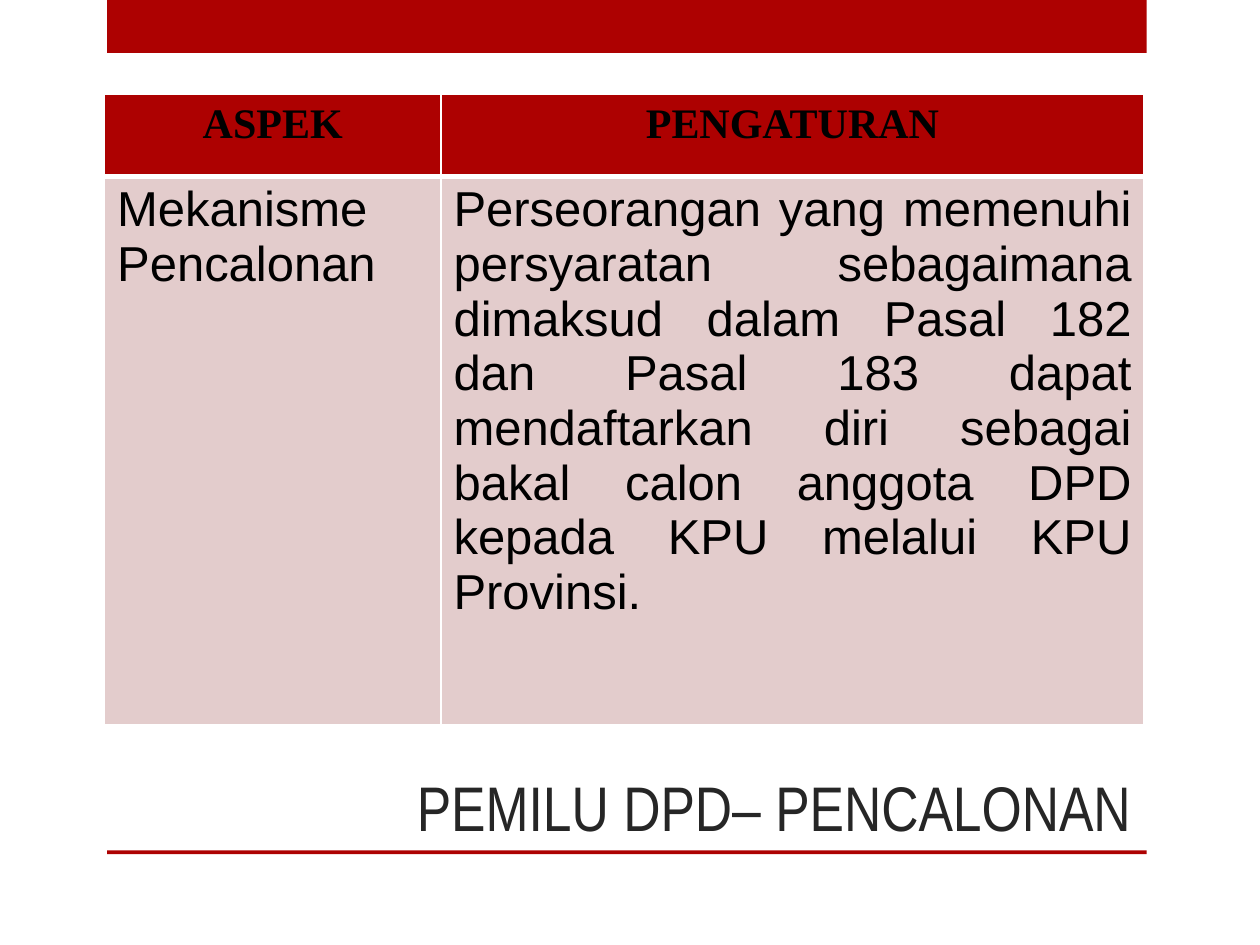
from lxml import etree
from pptx import Presentation
from pptx.dml.color import RGBColor
from pptx.enum.shapes import MSO_SHAPE
from pptx.enum.text import MSO_ANCHOR, PP_ALIGN
from pptx.oxml.ns import qn
from pptx.util import Inches, Pt

RECT = MSO_SHAPE.RECTANGLE
BOTTOM = MSO_ANCHOR.BOTTOM
LEFT, MID, RIGHT, FULL = (
    PP_ALIGN.LEFT, PP_ALIGN.CENTER, PP_ALIGN.RIGHT, PP_ALIGN.JUSTIFY)

RED = RGBColor(0xAD, 0x01, 0x01)
PINK = RGBColor(0xE3, 0xCC, 0xCC)
WHITE = RGBColor(0xFF, 0xFF, 0xFF)
BLACK = RGBColor(0, 0, 0)
GREY = RGBColor(0x26, 0x26, 0x26)

TITLE = {"name": "Arial Narrow", "size": Pt(36), "bold": False}
HEAD = {"name": "Times New Roman", "size": Pt(24), "bold": True}
BODY = {"name": "Arial", "size": Pt(28), "bold": False}


def write(frame, text, align, form, color):
    par = frame.paragraphs[0]
    par.alignment = align
    run = par.add_run()
    run.text = text
    for key, value in form.items():
        setattr(run.font, key, value)
    run.font.color.rgb = color


def border(cell, widths):
    props = cell._tc.get_or_add_tcPr()
    for i, (side, width) in enumerate(widths.items()):
        line = etree.Element(qn("a:ln" + side), w=str(Pt(width)))
        fill = etree.SubElement(line, qn("a:solidFill"))
        etree.SubElement(fill, qn("a:srgbClr"), val=str(WHITE))
        props.insert(i, line)


deck = Presentation()
deck.slide_width, deck.slide_height = Inches(10), Inches(7.5)
slide = deck.slides.add_slide(deck.slide_layouts[5])

# Red bar at the top and thin rule under the title
for top, height in ((0, 0.42), (6.75, 0.03)):
    bar = slide.shapes.add_shape(
        RECT, Inches(0.85), Inches(top), Inches(8.25), Inches(height))
    bar.shadow.inherit = False
    bar.fill.solid()
    bar.fill.fore_color.rgb = RED
    bar.line.fill.background()

# Title
title = slide.shapes.title
title.left, title.top = Inches(0.83), Inches(5)
title.width, title.height = Inches(8.25), Inches(1.75)
title.text_frame.vertical_anchor = BOTTOM
write(title.text_frame, "PEMILU DPD– PENCALONAN", RIGHT, TITLE, GREY)

# Table
table = slide.shapes.add_table(
    2, 2, Inches(0.83), Inches(0.75), Inches(8.25), Inches(5)).table
for col, width in zip(table.columns, (2.67, 5.58)):
    col.width = Inches(width)

rows = (
    (0.65, RED, HEAD, {"L": 1, "R": 1, "T": 1, "B": 3},
     (("ASPEK", MID), ("PENGATURAN", MID))),
    (4.35, PINK, BODY, {"L": 1, "R": 1, "T": 3, "B": 1},
     (("Mekanisme Pencalonan", LEFT),
      ("Perseorangan yang memenuhi persyaratan sebagaimana dimaksud dalam "
       "Pasal 182 dan Pasal 183 dapat mendaftarkan diri sebagai bakal calon "
       "anggota DPD kepada KPU melalui KPU Provinsi.", FULL))),
)
for row, (height, fill, form, widths, texts) in zip(table.rows, rows):
    row.height = Inches(height)
    for cell, (text, align) in zip(row.cells, texts):
        cell.fill.solid()
        cell.fill.fore_color.rgb = fill
        border(cell, widths)
        write(cell.text_frame, text, align, form, BLACK)

deck.save("out.pptx")
